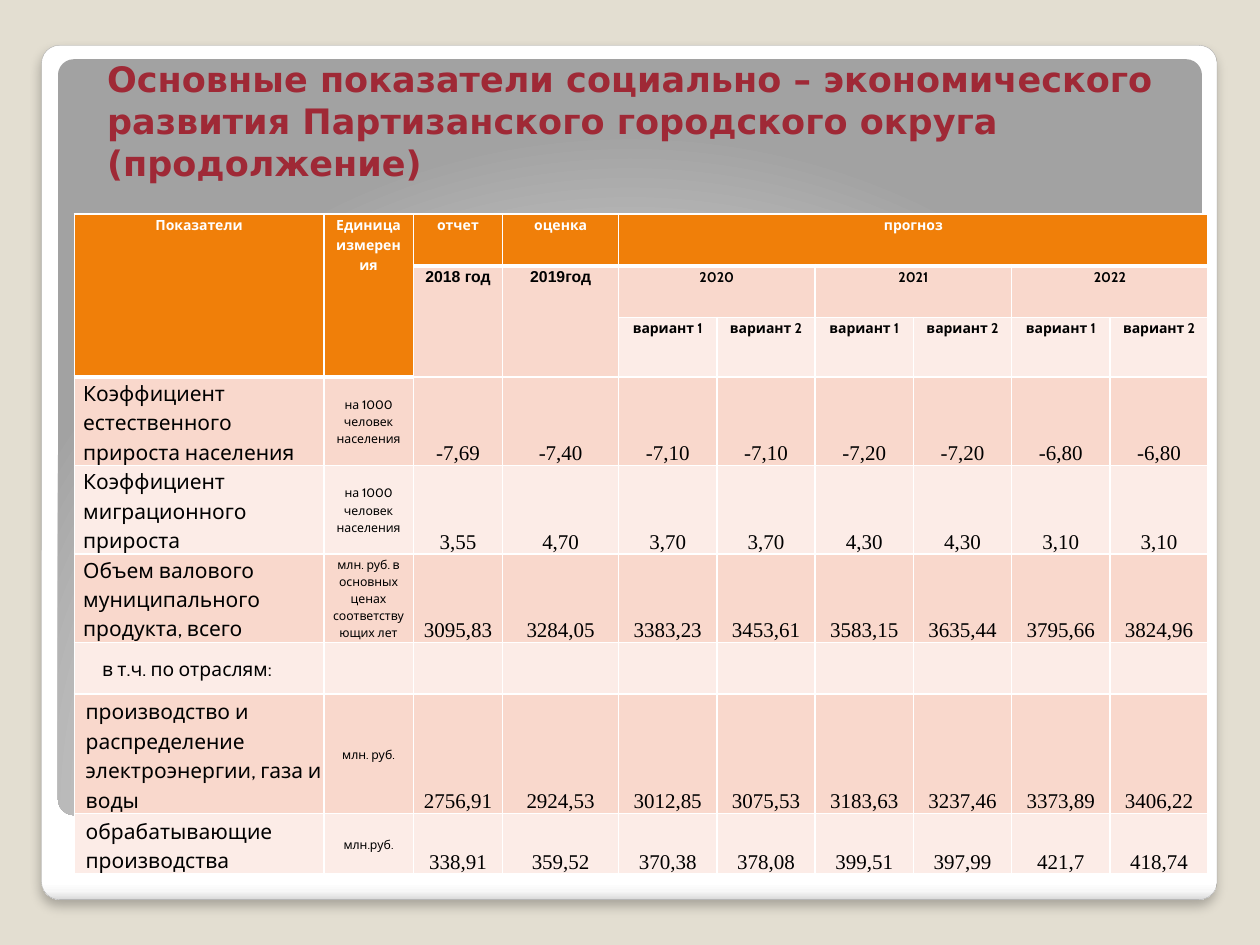
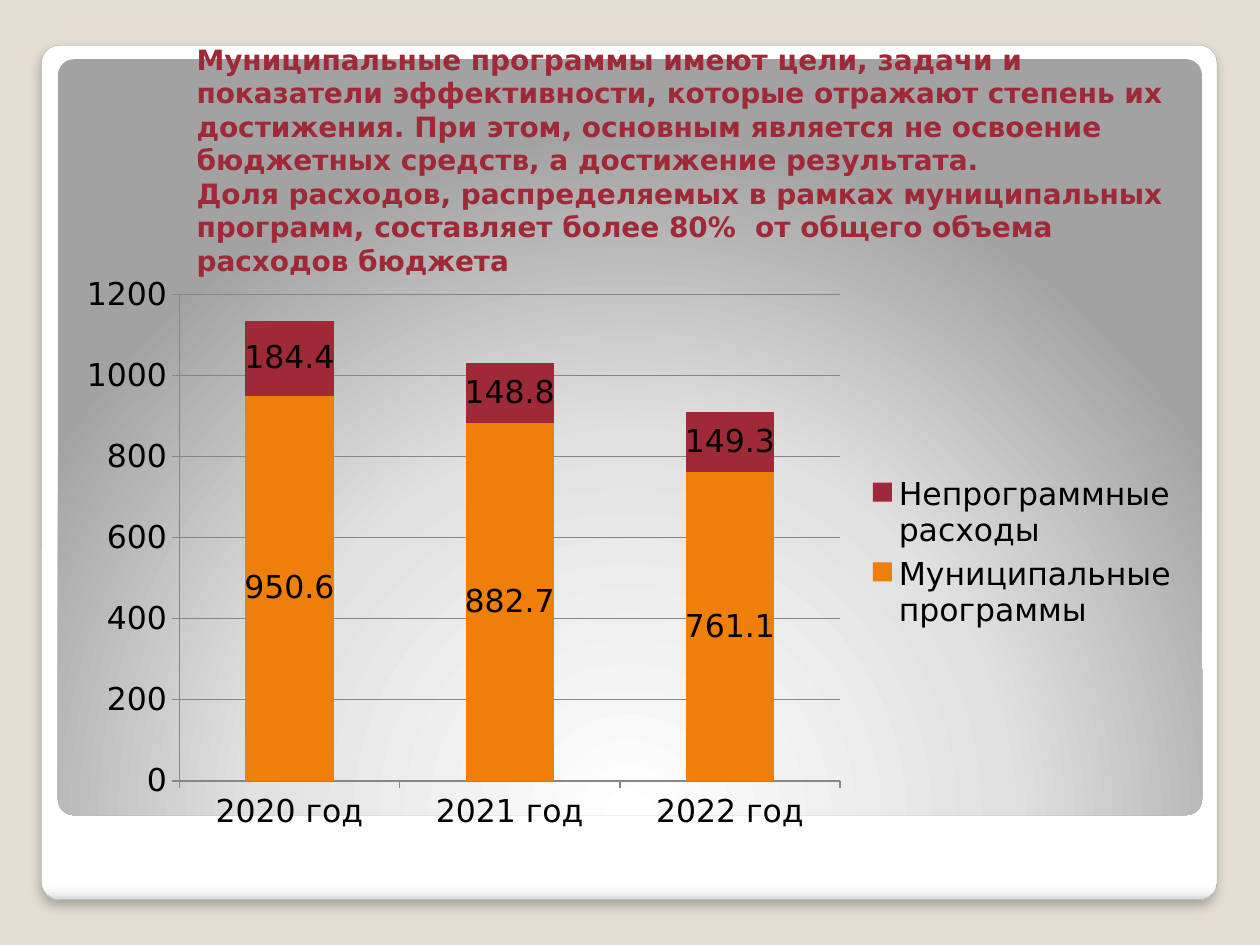
from dataclasses import dataclass

from pptx import Presentation
from pptx.chart.data import CategoryChartData
from pptx.dml.color import RGBColor
from pptx.enum.chart import XL_CHART_TYPE, XL_LEGEND_POSITION, XL_TICK_MARK
from pptx.enum.shapes import MSO_SHAPE
from pptx.enum.text import MSO_ANCHOR, MSO_AUTO_SIZE, PP_ALIGN
from pptx.oxml import parse_xml
from pptx.oxml.ns import nsdecls
from pptx.util import Inches, Pt

LEFT, CENTER = PP_ALIGN.LEFT, PP_ALIGN.CENTER
TOP, MIDDLE, BOTTOM = MSO_ANCHOR.TOP, MSO_ANCHOR.MIDDLE, MSO_ANCHOR.BOTTOM
ROUNDED = MSO_SHAPE.ROUNDED_RECTANGLE
STACKED = XL_CHART_TYPE.COLUMN_STACKED
LEGEND_RIGHT = XL_LEGEND_POSITION.RIGHT
TICK_OUTSIDE = XL_TICK_MARK.OUTSIDE

SLIDE_W, SLIDE_H = Inches(10), Inches(7.5)
COL, ROW = SLIDE_W / 10, SLIDE_H / 7.5
TITLE_ONLY = 5

COLORS = {
    "background": "E3DED1",
    "card_line": "A4A4A4",
    "white": "FFFFFF",
    "black": "000000",
    "orange": "F07F09",
    "crimson": "9F2936",
    "band_dark": "F9D8CC",
    "band_light": "FCECE7",
    "grid": "868686",
}
DISPLAY, TABLE_FONT, FIGURES, YEAR_FONT = "DejaVu Sans", "Cabin", "Times New Roman", "Arial"

CARD_STOPS = [(0, "FFFFFF"), (98, "FFFFFF"), (99, "F7F7F7"), (100, "DADADA")]
GLOW_STOPS = [(0, "FFFFFF"), (55, "E1E1E1"), (100, "A2A2A2")]
DOWNWARD = '<a:lin ang="5400000" scaled="0"/>'
FROM_BELOW = '<a:path path="circle"><a:fillToRect l="50000" t="175000" r="50000" b="-75000"/></a:path>'

COLUMN_WEIGHTS = [1.98, 0.71, 0.71, 0.92] + [0.78] * 6
ROW_HEIGHTS = [0.41, 0.41, 0.47, 0.7, 0.7, 0.7, 0.41, 0.95, 0.47]
HEADER_ROWS = 3
MERGES = [((0, 0), (2, 0)), ((0, 1), (2, 1)), ((0, 4), (0, 9)), ((1, 2), (2, 2)),
          ((1, 3), (2, 3)), ((1, 4), (1, 5)), ((1, 6), (1, 7)), ((1, 8), (1, 9))]
HEADINGS = ["Показатели", "Единица измерения", "отчет", "оценка", "прогноз"]
REPORT_YEARS = ["2018 год", "2019год"]
FORECAST_YEARS = ["2020", "2021", "2022"]
VARIANTS = ["вариант 1", "вариант 2"]
INDICATORS = [
    ("Коэффициент естественного прироста населения", "на 1000 человек населения",
     "-7,69 -7,40 -7,10 -7,10 -7,20 -7,20 -6,80 -6,80"),
    ("Коэффициент миграционного прироста", "на 1000 человек населения",
     "3,55 4,70 3,70 3,70 4,30 4,30 3,10 3,10"),
    ("Объем валового муниципального продукта, всего",
     "млн. руб. в основных ценах соответствующих лет",
     "3095,83 3284,05 3383,23 3453,61 3583,15 3635,44 3795,66 3824,96"),
    ("в т.ч. по отраслям:", "", ""),
    ("производство и распределение электроэнергии, газа и воды", "млн. руб.",
     "2756,91 2924,53 3012,85 3075,53 3183,63 3237,46 3373,89 3406,22"),
    ("обрабатывающие производства", "млн.руб.",
     "338,91 359,52 370,38 378,08 399,51 397,99 421,7 418,74"),
]
SUBHEADING, FIRST_BRANCH = 3, 4

BUDGET_YEARS = ["2020 год", "2021 год", "2022 год"]
SPENDING = [
    ("Муниципальные программы", [950.6, 882.7, 761.1], "orange"),
    ("Непрограммные расходы", [184.4, 148.8, 149.3], "crimson"),
]


@dataclass
class Box:
    col: float
    row: float
    cols: float
    rows: float

    def emu(self):
        return (int(self.col * COL), int(self.row * ROW),
                int(self.cols * COL), int(self.rows * ROW))


@dataclass
class CellStyle:
    size: float
    font: str = TABLE_FONT
    color: str = "black"
    bold: bool = False
    align: int = CENTER
    anchor: int = TOP
    spacing: float = 1.15
    insets: tuple = (0.07, 0, 0.07, 0)


HEADING = CellStyle(8, color="white", bold=True)
YEAR = CellStyle(8, bold=True)
REPORT_YEAR = CellStyle(9, YEAR_FONT, bold=True)
INDICATOR = CellStyle(12, align=LEFT, anchor=MIDDLE)
INDENTED = CellStyle(11, align=LEFT, anchor=MIDDLE, insets=(0.22, 0, 0.07, 0))
BRANCH = CellStyle(12, align=LEFT, anchor=MIDDLE, insets=(0.09, 0.01, 0.01, 0))
UNIT = CellStyle(7, anchor=MIDDLE)
FIGURE = CellStyle(12, FIGURES, anchor=BOTTOM, spacing=1, insets=(0.01, 0.01, 0.01, 0))


def rgb(name):
    return RGBColor.from_string(COLORS[name])


def set_font(font, name, size, color, bold=False):
    font.name, font.size, font.bold = name, Pt(size), bold
    font.color.rgb = rgb(color)


def add_panel(slide, box, stops, direction):
    panel = slide.shapes.add_shape(ROUNDED, *box.emu())
    panel.adjustments[0] = 0.021
    panel.shadow.inherit = False
    gradient = "".join(
        f'<a:gs pos="{share * 1000}"><a:srgbClr val="{color}"/></a:gs>' for share, color in stops)
    panel.element.spPr.prstGeom.addnext(parse_xml(
        f'<a:gradFill {nsdecls("a")} rotWithShape="1"><a:gsLst>{gradient}</a:gsLst>'
        f'{direction}</a:gradFill>'))
    panel.line.fill.background()
    return panel


def move_backdrop_to_master(prs, slide):
    card = add_panel(slide, Box(0.33, 0.36, 9.33, 6.78), CARD_STOPS, DOWNWARD)
    card.line.color.rgb = rgb("card_line")
    card.line.width = Pt(0.16)
    card.element.spPr.find("{*}effectLst").append(parse_xml(
        f'<a:outerShdw {nsdecls("a")} blurRad="{Pt(6)}" dist="{Pt(4)}" dir="5400000" '
        f'rotWithShape="0"><a:srgbClr val="{COLORS["black"]}"><a:alpha val="25000"/>'
        '</a:srgbClr></a:outerShdw>'))
    glow = add_panel(slide, Box(0.46, 0.47, 9.08, 6), GLOW_STOPS, FROM_BELOW)
    for index, panel in enumerate([card, glow], start=2):
        prs.slide_master.shapes.element.insert(index, panel.element)
    backdrop = prs.slide_master.background.fill
    backdrop.solid()
    backdrop.fore_color.rgb = rgb("background")


def place_title(slide, box, text, size):
    title = slide.shapes.title
    title.left, title.top, title.width, title.height = box.emu()
    frame = title.text_frame
    frame.text = text
    frame.word_wrap = True
    frame.auto_size = MSO_AUTO_SIZE.NONE
    frame.vertical_anchor = BOTTOM
    heading = frame.paragraphs[0]
    heading.alignment = LEFT
    set_font(heading.font, DISPLAY, size, "crimson", True)


def paint_cell(cell, fill, bottom_width):
    properties = cell._tc.get_or_add_tcPr()
    for side, width in (("L", 1), ("R", 1), ("T", 1), ("B", bottom_width)):
        properties.append(parse_xml(
            f'<a:ln{side} {nsdecls("a")} w="{Pt(width)}"><a:solidFill>'
            f'<a:srgbClr val="{COLORS["white"]}"/></a:solidFill></a:ln{side}>'))
    cell.fill.solid()
    cell.fill.fore_color.rgb = rgb(fill)


def write_cell(cell, text, style):
    if not text:
        return
    cell.text = text
    cell.vertical_anchor = style.anchor
    (cell.margin_left, cell.margin_top,
     cell.margin_right, cell.margin_bottom) = map(Inches, style.insets)
    line = cell.text_frame.paragraphs[0]
    line.alignment, line.line_spacing = style.align, style.spacing
    set_font(line.font, style.font, style.size, style.color, style.bold)


def write_table_header(table):
    for start, end in MERGES:
        table.cell(*start).merge(table.cell(*end))
    for col, heading in enumerate(HEADINGS):
        write_cell(table.cell(0, col), heading, HEADING)
    for col, year in enumerate(REPORT_YEARS, start=2):
        write_cell(table.cell(1, col), year, REPORT_YEAR)
    for index, year in enumerate(FORECAST_YEARS):
        first = 4 + index * len(VARIANTS)
        write_cell(table.cell(1, first), year, YEAR)
        for col, variant in enumerate(VARIANTS, start=first):
            write_cell(table.cell(2, col), variant, YEAR)


def write_indicators(table):
    for index, (name, unit, figures) in enumerate(INDICATORS):
        row = HEADER_ROWS + index
        style = INDENTED if index == SUBHEADING else BRANCH if index >= FIRST_BRANCH else INDICATOR
        write_cell(table.cell(row, 0), name, style)
        write_cell(table.cell(row, 1), unit, UNIT)
        for col, figure in enumerate(figures.split(), start=2):
            write_cell(table.cell(row, col), figure, FIGURE)


def add_indicator_table(slide, box):
    frame = slide.shapes.add_table(len(ROW_HEIGHTS), len(COLUMN_WEIGHTS), *box.emu())
    table = frame.table
    for column, weight in zip(table.columns, COLUMN_WEIGHTS):
        column.width = int(box.cols * COL * weight / sum(COLUMN_WEIGHTS))
    for row, height in zip(table.rows, ROW_HEIGHTS):
        row.height = int(box.rows * ROW * height / sum(ROW_HEIGHTS))
    for row in range(len(ROW_HEIGHTS)):
        for col in range(len(COLUMN_WEIGHTS)):
            is_heading = row == 0 or (row < HEADER_ROWS and col < 2)
            band = "band_dark" if row % 2 else "band_light"
            paint_cell(table.cell(row, col), "orange" if is_heading else band,
                       3 if is_heading else 1)
    write_table_header(table)
    write_indicators(table)


def add_spending_chart(slide, box):
    data = CategoryChartData()
    data.categories = BUDGET_YEARS
    for name, values, _ in SPENDING:
        data.add_series(name, values)
    chart = slide.shapes.add_chart(STACKED, *box.emu(), data).chart
    set_font(chart.font, DISPLAY, 18, "black")
    chart.has_title = False
    chart.has_legend = True
    chart.legend.position = LEGEND_RIGHT
    chart.legend.include_in_layout = False
    columns = chart.plots[0]
    columns.overlap, columns.gap_width = 100, 150
    columns.vary_by_categories = False
    for series, (_, _, color) in zip(columns.series, SPENDING):
        series.format.fill.solid()
        series.format.fill.fore_color.rgb = rgb(color)
        series.data_labels.show_value = True
    for axis in (chart.category_axis, chart.value_axis):
        axis.major_tick_mark = TICK_OUTSIDE
        axis.format.line.color.rgb = rgb("grid")
    chart.value_axis.has_major_gridlines = True
    chart.value_axis.major_gridlines.format.line.color.rgb = rgb("grid")


def build_indicators_slide(slide):
    place_title(slide, Box(0.75, 0.36, 8.95, 1.15),
                "Основные показатели социально – экономического развития "
                "Партизанского городского округа (продолжение)", 20)
    add_indicator_table(slide, Box(0.59, 1.7, 9, sum(ROW_HEIGHTS)))


def build_programs_slide(slide):
    place_title(slide, Box(1.46, 0.28, 8.19, 1.97),
                "Муниципальные программы имеют цели, задачи и показатели эффективности, "
                "которые отражают степень их достижения. При этом, основным является не "
                "освоение бюджетных средств, а достижение результата.\v"
                "Доля расходов, распределяемых в рамках муниципальных программ, составляет "
                "более 80%  от общего объема расходов бюджета", 16)
    add_spending_chart(slide, Box(0.51, 2.1, 8.95, 4.58))


def main():
    prs = Presentation()
    prs.slide_width, prs.slide_height = SLIDE_W, SLIDE_H
    layout = prs.slide_layouts[TITLE_ONLY]
    indicators, programs = (prs.slides.add_slide(layout) for _ in range(2))
    move_backdrop_to_master(prs, indicators)
    build_indicators_slide(indicators)
    build_programs_slide(programs)
    prs.save("out.pptx")


if __name__ == "__main__":
    main()
